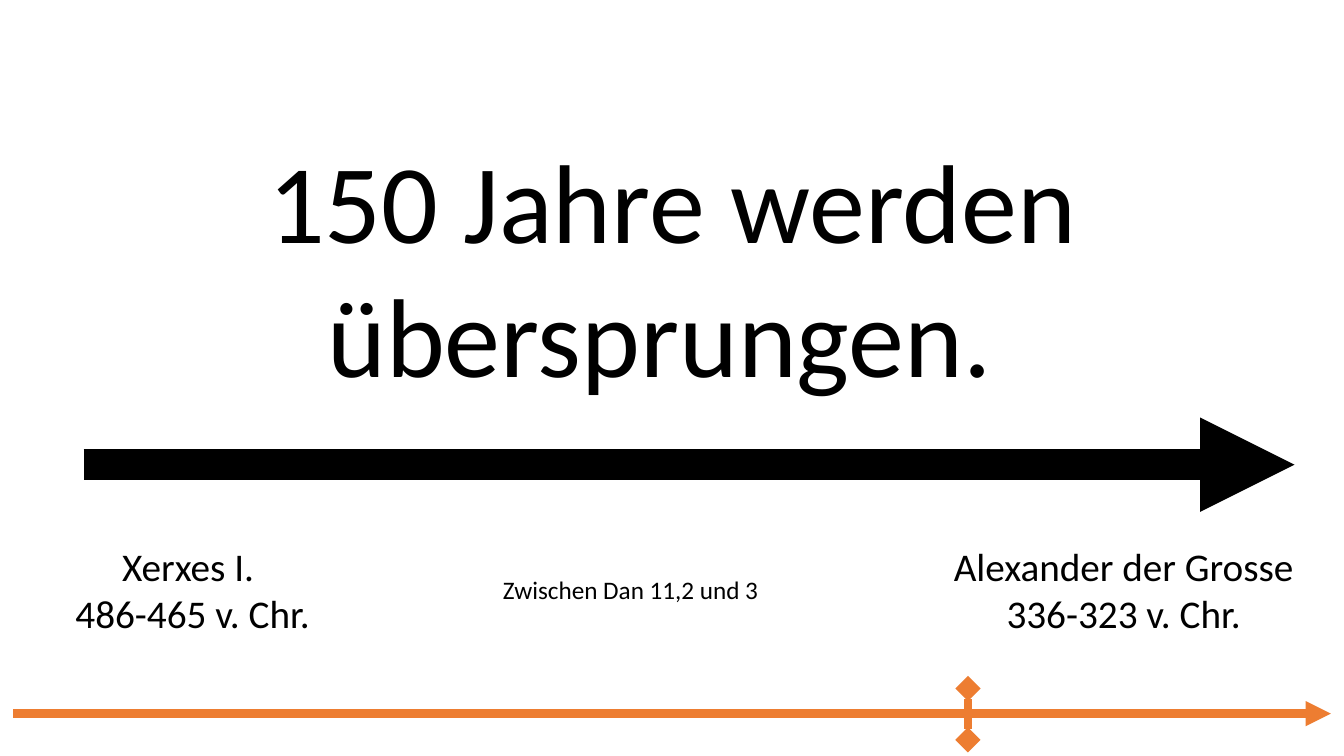
from dataclasses import dataclass
from typing import Optional

from lxml.etree import SubElement
from pptx import Presentation
from pptx.dml.color import RGBColor
from pptx.enum.shapes import MSO_CONNECTOR
from pptx.enum.text import MSO_ANCHOR, MSO_AUTO_SIZE, PP_ALIGN
from pptx.oxml.ns import qn
from pptx.util import Emu, Pt

EMU_PER_PX = 9144  # 100 px to the inch
TITLE_ONLY = 5


@dataclass(frozen=True)
class Theme:
    font: str = "Calibri"
    ink: RGBColor = RGBColor(0x00, 0x00, 0x00)
    accent: RGBColor = RGBColor(0xED, 0x7D, 0x31)
    title_size: float = 80
    ruler_size: float = 28
    verse_size: float = 18
    span_width: float = 22.5
    timeline_width: float = 6


@dataclass(frozen=True)
class Box:
    left: int
    top: int
    width: int
    height: int


@dataclass(frozen=True)
class Label:
    box: Box
    lines: tuple[str, ...]
    size: float
    align: PP_ALIGN = PP_ALIGN.CENTER
    wrap: bool = True


@dataclass(frozen=True)
class Arrow:
    start: tuple[int, int]
    end: tuple[int, int]
    color: RGBColor
    width: float
    tail: str
    head: Optional[str] = None


THEME = Theme()

TITLE = Label(Box(90, 125, 1154, 279), ("150 Jahre werden übersprungen. ",), THEME.title_size)

LABELS = (
    Label(Box(58, 533, 266, 104), ("Xerxes I. ", "486-465 v. Chr."), THEME.ruler_size),
    Label(Box(931, 533, 367, 104), ("Alexander der Grosse", "336-323 v. Chr."), THEME.ruler_size),
    Label(Box(489, 565, 277, 40), ("Zwischen Dan 11,2 und 3",), THEME.verse_size,
          PP_ALIGN.LEFT, wrap=False),
)

ARROWS = (
    # Skipped span, timeline, and its marker
    Arrow((83, 461), (1284, 461), THEME.ink, THEME.span_width, "triangle"),
    Arrow((13, 708), (1320, 708), THEME.accent, THEME.timeline_width, "triangle"),
    Arrow((960, 683), (960, 734), THEME.accent, THEME.timeline_width, "diamond", "diamond"),
)


def px(value: int) -> Emu:
    return Emu(value * EMU_PER_PX)


def write_label(shape, label: Label) -> None:
    box = label.box
    shape.left, shape.top = px(box.left), px(box.top)
    shape.width, shape.height = px(box.width), px(box.height)
    frame = shape.text_frame
    frame.text = "\n".join(label.lines)
    frame.word_wrap = label.wrap
    frame.auto_size = MSO_AUTO_SIZE.SHAPE_TO_FIT_TEXT
    frame.vertical_anchor = MSO_ANCHOR.TOP
    for paragraph in frame.paragraphs:
        paragraph.alignment = label.align
        paragraph.font.name = THEME.font
        paragraph.font.size = Pt(label.size)
        paragraph.font.color.rgb = THEME.ink


def draw_arrow(slide, arrow: Arrow) -> None:
    connector = slide.shapes.add_connector(
        MSO_CONNECTOR.STRAIGHT, *map(px, arrow.start + arrow.end))
    connector.line.color.rgb = arrow.color
    connector.line.width = Pt(arrow.width)
    # Arrowheads, then an empty effect list against the shadow
    outline = connector.line._get_or_add_ln()
    for tag, kind in (("a:headEnd", arrow.head), ("a:tailEnd", arrow.tail)):
        if kind:
            SubElement(outline, qn(tag), type=kind)
    SubElement(connector._element.spPr, qn("a:effectLst"))


def main() -> None:
    deck = Presentation()
    deck.slide_width, deck.slide_height = px(1333), px(750)
    slide = deck.slides.add_slide(deck.slide_layouts[TITLE_ONLY])

    # Statement
    write_label(slide.shapes.title, TITLE)

    # Arrows
    for arrow in ARROWS:
        draw_arrow(slide, arrow)

    # Rulers and Bible passage
    for label in LABELS:
        box = label.box
        textbox = slide.shapes.add_textbox(*map(px, (box.left, box.top, box.width, box.height)))
        write_label(textbox, label)

    deck.save("out.pptx")


if __name__ == "__main__":
    main()
